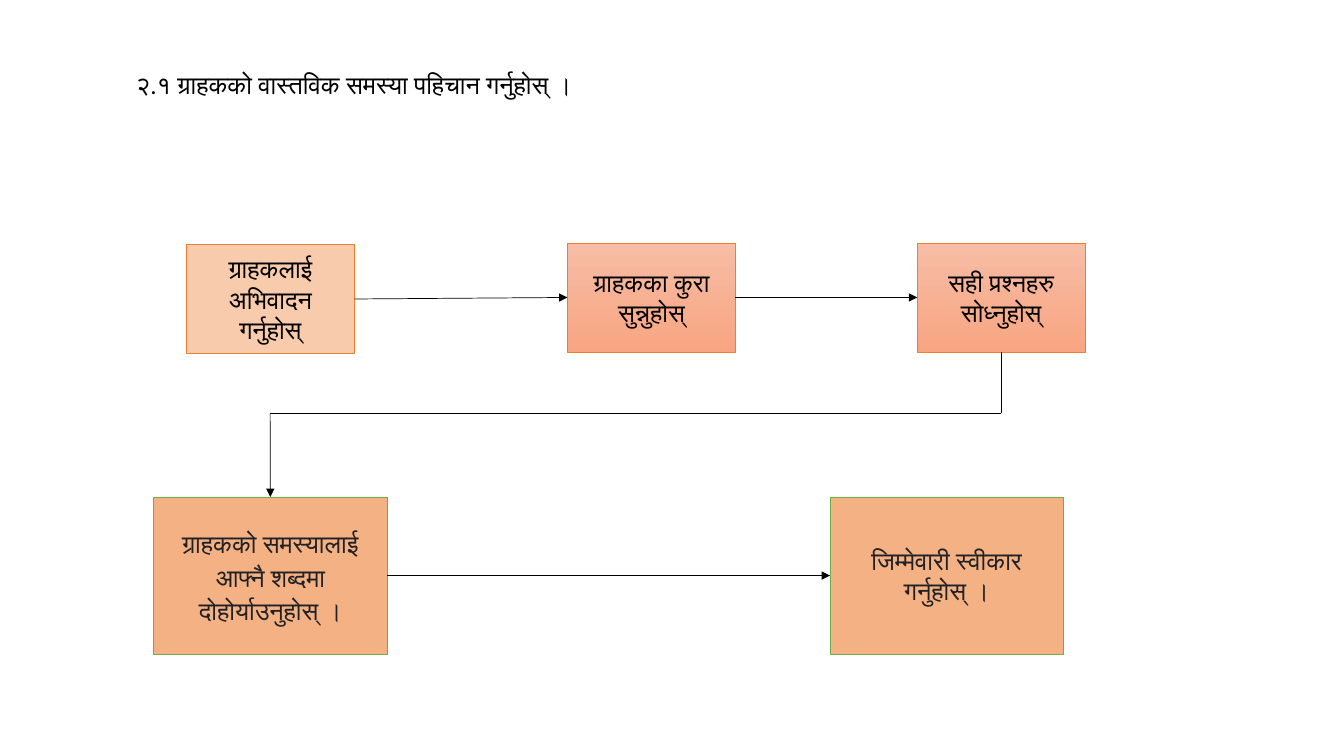
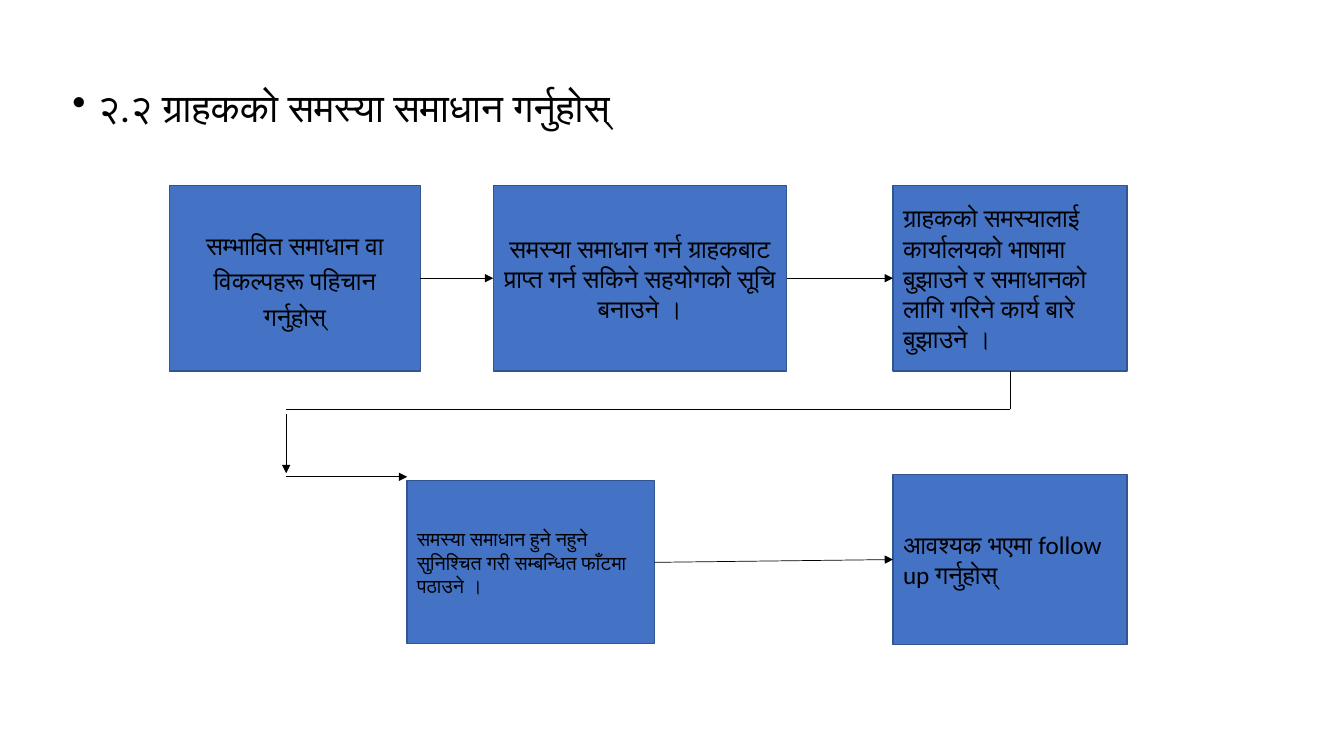
from lxml import etree
from pptx import Presentation
from pptx.dml.color import RGBColor
from pptx.enum.shapes import MSO_CONNECTOR, MSO_SHAPE
from pptx.enum.text import MSO_ANCHOR, PP_ALIGN
from pptx.oxml.ns import qn
from pptx.util import Inches, Pt

RECTANGLE = MSO_SHAPE.RECTANGLE
STRAIGHT = MSO_CONNECTOR.STRAIGHT
MIDDLE, TOP_ANCHOR = MSO_ANCHOR.MIDDLE, MSO_ANCHOR.TOP
LEFT_ALIGN, CENTER = PP_ALIGN.LEFT, PP_ALIGN.CENTER
TOP, LEFT, BOTTOM, RIGHT = range(4)

COLUMNS, ROWS = 40, 30
FONT, LABEL_FONT, SMALL_FONT = "Calibri", "Noto Sans CJK JP", "Arial"
COLORS = {
    "text": "000000",
    "soft_text": "202124",
    "peach": "F8CBAD",
    "peach_top": "F7BDA5",
    "peach_bottom": "F8A582",
    "orange": "F4B183",
    "orange_line": "ED7D31",
    "green_line": "70AD47",
    "blue": "4472C4",
    "blue_line": "325491",
}


def color(name):
    return RGBColor.from_string(COLORS[name])


class FlowDeck:
    """Draws flow charts; every position and size is in grid columns and rows."""

    def __init__(self):
        self.presentation = Presentation()
        self.presentation.slide_width = Inches(13.33)
        self.presentation.slide_height = Inches(7.5)
        self.slide = None

    def new_slide(self):
        blank = self.presentation.slide_layouts[6]
        self.slide = self.presentation.slides.add_slide(blank)

    def x(self, columns):
        return round(self.presentation.slide_width * columns / COLUMNS)

    def y(self, rows):
        return round(self.presentation.slide_height * rows / ROWS)

    def place(self, left, top, width, height):
        return self.x(left), self.y(top), self.x(width), self.y(height)

    def set_text(self, shape, text, size, font, text_color, align, anchor):
        frame = shape.text_frame
        frame.word_wrap = True
        frame.vertical_anchor = anchor
        paragraph = frame.paragraphs[0]
        paragraph.text = text
        paragraph.alignment = align
        paragraph.font.size = Pt(size)
        paragraph.font.name = font
        paragraph.font.color.rgb = color(text_color)
        return paragraph

    def title(self, text, area, size, anchor=MIDDLE, bullet=False):
        box = self.slide.shapes.add_textbox(*self.place(*area))
        paragraph = self.set_text(box, text, size, FONT, "text", LEFT_ALIGN, anchor)
        paragraph.line_spacing = 0.9
        if bullet:
            paragraph.space_before = Pt(10)
            properties = paragraph._p.get_or_add_pPr()
            properties.set("marL", str(Inches(0.25)))
            properties.set("indent", str(-Inches(0.25)))
            character = etree.Element(qn("a:buChar"), char="•")
            properties.insert_element_before(character, "a:tabLst", "a:defRPr")

    def box(self, text, area, fill, line, line_width=0.5, size=18, font=FONT,
            text_color="text", align=CENTER, spacing=None, inset=0.1):
        """Add a step; a pair of colour names as fill gives a vertical gradient."""
        shape = self.slide.shapes.add_shape(RECTANGLE, *self.place(*area))
        shape.shadow.inherit = False
        if isinstance(fill, tuple):
            shape.fill.gradient()
            shape.fill.gradient_angle = 270
            for stop, name in zip(shape.fill.gradient_stops, fill):
                stop.color.rgb = color(name)
        else:
            shape.fill.solid()
            shape.fill.fore_color.rgb = color(fill)
        shape.line.color.rgb = color(line)
        shape.line.width = Pt(line_width)
        paragraph = self.set_text(shape, text, size, font, text_color, align, MIDDLE)
        paragraph.line_spacing = spacing
        frame = shape.text_frame
        frame.margin_left = frame.margin_right = Inches(inset)
        return shape

    def line(self, start, end, arrow=True):
        """Join two ends, each a (column, row) point or a (shape, side) pair."""
        points = [(0, 0) if hasattr(place[0], "shape_id")
                  else (self.x(place[0]), self.y(place[1]))
                  for place in (start, end)]
        connector = self.slide.shapes.add_connector(STRAIGHT, *points[0], *points[1])
        if hasattr(start[0], "shape_id"):
            connector.begin_connect(*start)
        if hasattr(end[0], "shape_id"):
            connector.end_connect(*end)
        connector.line.color.rgb = color("text")
        connector.line.width = Pt(0.5)
        if arrow:
            outline = connector.line._get_or_add_ln()
            etree.SubElement(outline, qn("a:tailEnd"), type="triangle")
        etree.SubElement(connector._element.spPr, qn("a:effectLst"))

    def step_arrow(self, first, second):
        self.line((first, RIGHT), (second, LEFT))

    def drop_and_turn(self, shape, column, row):
        """Lead down from a shape to the row, then across to the column."""
        middle = (shape.left + shape.width / 2) / self.x(1)
        self.line((shape, BOTTOM), (middle, row), arrow=False)
        self.line((middle, row), (column, row), arrow=False)


def identify_problem(deck):
    deck.new_slide()
    deck.title("२.१ ग्राहकको वास्तविक समस्या पहिचान गर्नुहोस् ।",
               (3.75, 1.68, 32.5, 3.48), 18)
    gradient = ("peach_top", "peach_bottom")
    greet, listen, ask = [
        deck.box(text, (left, top, 5, 4.33), fill, "orange_line", font=LABEL_FONT)
        for text, left, top, fill in (
            ("ग्राहकलाई अभिवादन गर्नुहोस्", 5.55, 9.7, "peach"),
            ("ग्राहकका कुरा सुन्नुहोस्", 16.89, 9.64, gradient),
            ("सही प्रश्नहरु सोध्नुहोस्", 27.3, 9.64, gradient),
        )]
    restate, accept = [
        deck.box(text, (left, 19.72, 6.95, 6.24), "orange", "green_line",
                 text_color="soft_text", spacing=spacing)
        for text, left, spacing in (
            ("ग्राहकको समस्यालाई आफ्नै शब्दमा दोहोर्याउनुहोस् ।", 4.57, Pt(24)),
            ("जिम्मेवारी स्वीकार गर्नुहोस् ।", 24.7, None),
        )]
    for first, second in ((greet, listen), (listen, ask), (restate, accept)):
        deck.step_arrow(first, second)
    turn = (8.04, 16.4)
    deck.drop_and_turn(ask, *turn)
    deck.line(turn, (restate, TOP))


def solve_problem(deck):
    deck.new_slide()
    deck.title("२.२ ग्राहकको समस्या समाधान गर्नुहोस्", (1.86, 3.32, 34.4, 3), 28,
               TOP_ANCHOR, bullet=True)
    steps = (
        ("सम्भावित समाधान वा विकल्पहरू पहिचान गर्नुहोस्",
         (5.04, 7.36, 7.47, 7.36), {"spacing": 1.17, "inset": 0.3}),
        ("समस्या समाधान गर्न ग्राहकबाट प्राप्त गर्न सकिने सहयोगको सूचि बनाउने ।",
         (14.68, 7.36, 8.73, 7.36), {"font": LABEL_FONT}),
        ("ग्राहकको समस्यालाई कार्यालयको भाषामा बुझाउने र समाधानको लागि "
         "गरिने कार्य बारे बुझाउने ।",
         (26.58, 7.36, 6.96, 7.36), {"align": LEFT_ALIGN}),
        ("समस्या समाधान हुने नहुने सुनिश्चित गरी सम्बन्धित फाँटमा पठाउने ।",
         (12.12, 19.08, 7.36, 6.47),
         {"align": LEFT_ALIGN, "size": 14, "font": SMALL_FONT}),
        ("आवश्यक भएमा follow up गर्नुहोस्",
         (26.58, 18.84, 6.96, 6.73), {"align": LEFT_ALIGN}),
    )
    options, support, explain, forward, follow_up = [
        deck.box(text, area, "blue", "blue_line", line_width=1, **style)
        for text, area, style in steps]
    for first, second in ((options, support), (support, explain), (forward, follow_up)):
        deck.step_arrow(first, second)
    deck.drop_and_turn(explain, 8.52, 16.25)
    deck.line((8.52, 16.44), (8.52, 18.78))
    deck.line((8.5, 18.92), (12.12, 18.92))


def main():
    deck = FlowDeck()
    identify_problem(deck)
    solve_problem(deck)
    deck.presentation.save("out.pptx")


if __name__ == "__main__":
    main()
